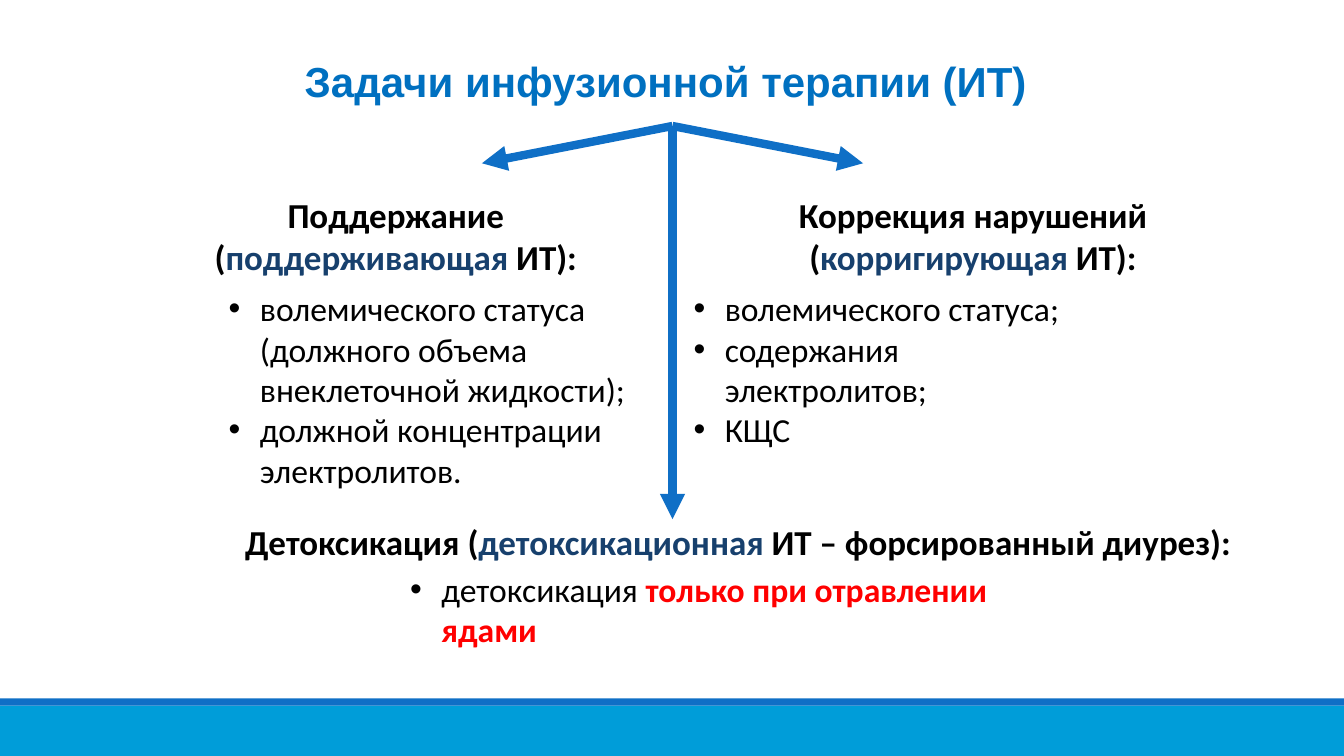
from lxml import etree
from pptx import Presentation
from pptx.dml.color import RGBColor
from pptx.enum.shapes import MSO_CONNECTOR as CONNECTOR, MSO_SHAPE as SHAPE
from pptx.enum.text import MSO_ANCHOR as ANCHOR, MSO_AUTO_SIZE as AUTO_SIZE, PP_ALIGN as ALIGN
from pptx.oxml.ns import qn
from pptx.util import Inches, Pt

BLACK, NAVY, RED = "000000", "17406D", "FF0000"
BLUE, CYAN, TITLE_BLUE = "0F6FC6", "009DD9", "0070C0"


def color(hex_code):
    return RGBColor.from_string(hex_code)


def add_text(paragraph, text, size=24, font="Calibri", fill=BLACK, bold=False):
    run = paragraph.add_run()
    run.text = text
    run.font.size = Pt(size)
    run.font.name = font
    run.font.bold = bold
    run.font.color.rgb = color(fill)


class TaskSlide:
    heading_size = 25
    bullet_indent = Inches(0.31)
    arrow_width = Pt(6)

    def __init__(self, deck):
        self.slide = deck.slides.add_slide(deck.slide_layouts[5])

    def band(self, top, height, fill):
        strip = self.slide.shapes.add_shape(
            SHAPE.RECTANGLE, 0, Inches(top), Inches(13.33), Inches(height))
        strip.shadow.inherit = False
        strip.fill.solid()
        strip.fill.fore_color.rgb = color(fill)
        strip.line.fill.background()

    def title(self, text, left, top, width, height):
        heading = self.slide.shapes.title
        heading.left, heading.top = Inches(left), Inches(top)
        heading.width, heading.height = Inches(width), Inches(height)
        frame = heading.text_frame
        frame.auto_size = AUTO_SIZE.NONE
        frame.vertical_anchor = ANCHOR.BOTTOM
        paragraph = frame.paragraphs[0]
        paragraph.alignment = ALIGN.CENTER
        paragraph.line_spacing = 0.85
        add_text(paragraph, text, size=30, font="Arial", fill=TITLE_BLUE, bold=True)

    def arrow(self, start, end):
        line = self.slide.shapes.add_connector(
            CONNECTOR.STRAIGHT, *(Inches(value) for value in start + end))
        line.line.color.rgb = color(BLUE)
        line.line.width = self.arrow_width
        outline = line.line._get_or_add_ln()
        etree.SubElement(outline, qn("a:tailEnd"), type="triangle")
        etree.SubElement(line._element.spPr, qn("a:effectLst"))

    def paragraphs(self, box, count):
        """Yield the paragraphs of a new wrapping text box."""
        frame = self.slide.shapes.add_textbox(*(Inches(value) for value in box)).text_frame
        frame.word_wrap = True
        frame.auto_size = AUTO_SIZE.SHAPE_TO_FIT_TEXT
        for index in range(count):
            yield frame.add_paragraph() if index else frame.paragraphs[0]

    def heading(self, box, lines):
        for paragraph, parts in zip(self.paragraphs(box, len(lines)), lines):
            paragraph.alignment = ALIGN.CENTER
            for text, fill in parts:
                add_text(paragraph, text, size=self.heading_size, fill=fill, bold=True)

    def bullets(self, box, items):
        for paragraph, (text, warning) in zip(self.paragraphs(box, len(items)), items):
            properties = paragraph._p.get_or_add_pPr()
            properties.set("marL", str(self.bullet_indent))
            properties.set("indent", str(-self.bullet_indent))
            etree.SubElement(properties, qn("a:buFont"), typeface="Arial")
            etree.SubElement(properties, qn("a:buChar"), char="•")
            add_text(paragraph, text)
            if warning:
                add_text(paragraph, warning, fill=RED, bold=True)


def main():
    deck = Presentation()
    deck.slide_width, deck.slide_height = Inches(13.33), Inches(7.5)
    tasks = TaskSlide(deck)

    # Footer bands and title
    tasks.band(7, 0.5, CYAN)
    tasks.band(6.93, 0.07, BLUE)
    tasks.title("Задачи инфузионной терапии (ИТ)", 0, 0.56, 13.21, 0.54)

    # Arrows from the title to the three tasks
    origin = (6.67, 1.25)
    for target in ((4.78, 1.62), (8.56, 1.62), (6.67, 5.15)):
        tasks.arrow(origin, target)

    # Maintenance
    tasks.heading((1.89, 1.87, 4.07, 0.94), [
        [("Поддержание", BLACK)],
        [("(", BLACK), ("поддерживающая", NAVY), (" ИТ):", BLACK)]])
    tasks.bullets((2.17, 2.81, 4.19, 2.12), [
        ("волемического статуса (должного объема внеклеточной жидкости);", ""),
        ("должной концентрации электролитов.", "")])

    # Correction
    tasks.heading((7.06, 1.87, 5.18, 0.94), [
        [("Коррекция нарушений", BLACK)],
        [("(", BLACK), ("корригирующая ", NAVY), ("ИТ):", BLACK)]])
    tasks.bullets((6.78, 2.81, 4.19, 1.72), [
        ("волемического статуса;", ""),
        ("содержания электролитов;", ""),
        ("КЩС", "")])

    # Detoxification
    tasks.heading((1.89, 5.11, 10.86, 0.52), [
        [("Детоксикация (", BLACK), ("детоксикационная", NAVY),
         (" ИТ – форсированный диурез):", BLACK)]])
    tasks.bullets((3.97, 5.59, 6.17, 0.91), [
        ("детоксикация ", "только при отравлении ядами")])

    deck.save("out.pptx")


if __name__ == "__main__":
    main()
